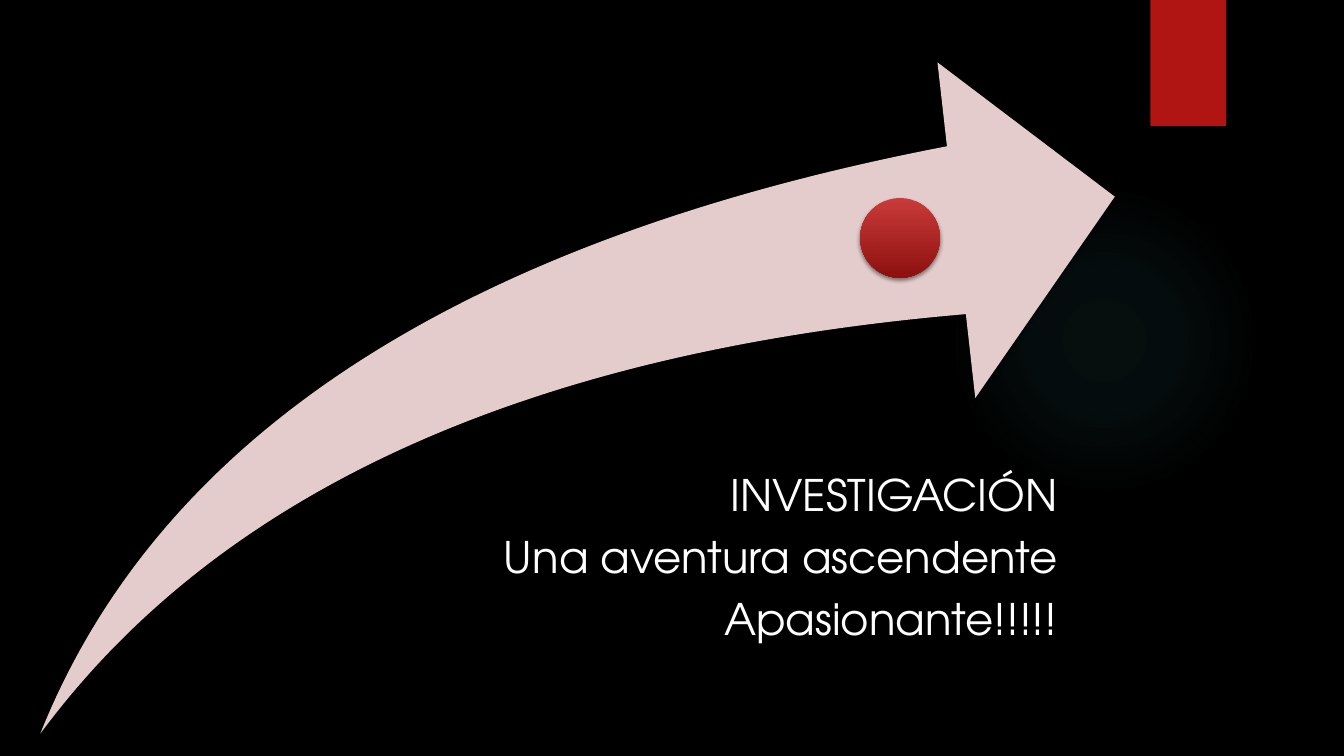
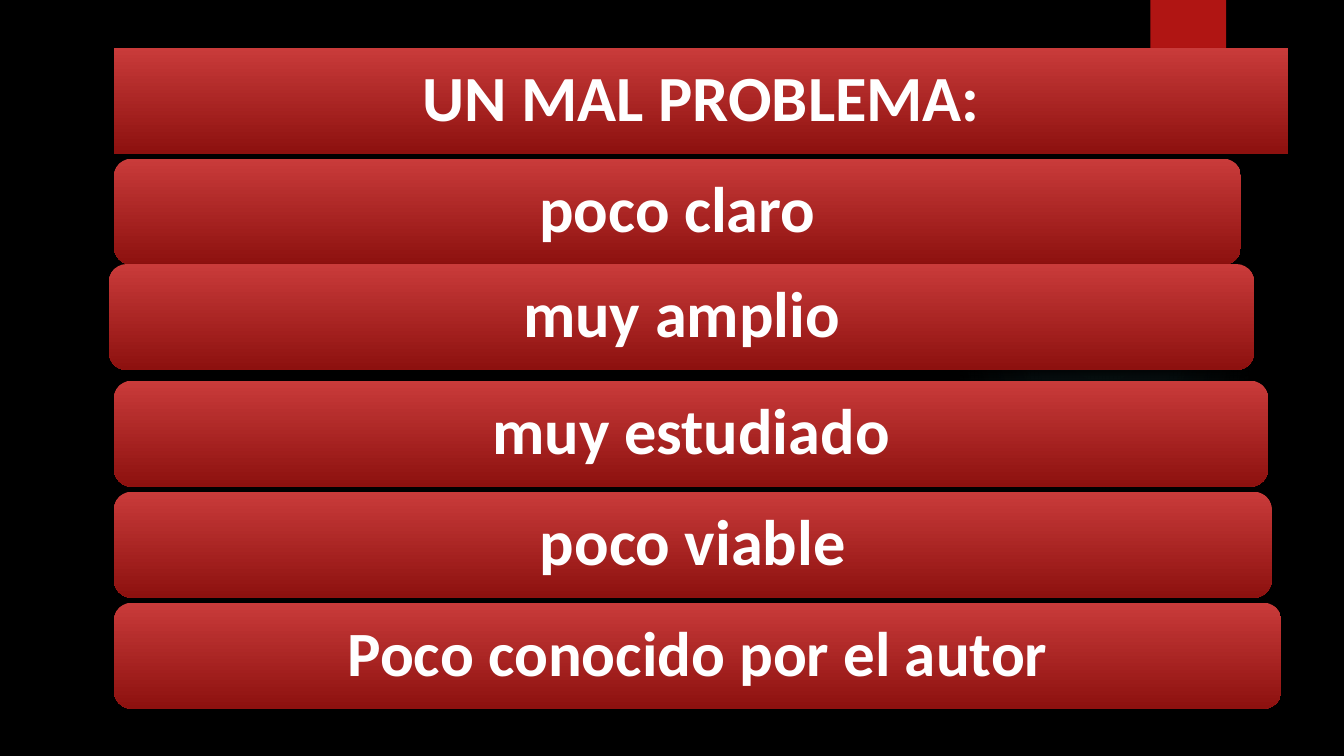
from pptx import Presentation
from pptx.dml.color import RGBColor
from pptx.enum import shapes, text
from pptx.oxml import ns, parse_xml
from pptx.util import Pt

BLACK = RGBColor(0x00, 0x00, 0x00)
WHITE = RGBColor(0xFF, 0xFF, 0xFF)
RED = RGBColor(0xB0, 0x15, 0x13)
LIGHT_RED = RGBColor(0xC9, 0x3B, 0x3A)
DARK_RED = RGBColor(0x8D, 0x11, 0x0F)
PINK = RGBColor(0xE4, 0xCC, 0xCC)
TEAL = RGBColor(0x50, 0xB9, 0xC1)

COVER_FONT = "TeX Gyre Adventor"
BAR_FONT = "Calibri"
COVER_SIZE = 31
COVER_GAP = 10.85
COVER_LINE = 44.3
BAR_SIZE = 46
BAR_HEIGHT = 75.7
BAR_PITCH = 79.3
PROBLEM_BARS = [
    ("UN MAL PROBLEMA:", 0, 0, 838.8, BAR_SIZE),
    ("poco claro", 0, 0, 805, BAR_SIZE),
    ("muy amplio", -3.6, -4, 818, BAR_SIZE),
    ("muy estudiado", 0, 0, 824.4, BAR_SIZE),
    ("poco viable", 0, 0, 826.9, BAR_SIZE),
    ("Poco conocido por el autor", 0, 0, 833.8, BAR_SIZE - 1),
]


def place(shape, left, top, width, height):
    shape.left, shape.top = Pt(left), Pt(top)
    shape.width, shape.height = Pt(width), Pt(height)


def add_preset(page, preset, left, top, width, height):
    return page.shapes.add_shape(preset, Pt(left), Pt(top), Pt(width), Pt(height))


def fill_solid(shape, color):
    shape.fill.solid()
    shape.fill.fore_color.rgb = color


def fill_red_gradient(shape):
    shape.fill.gradient()
    shape.fill.gradient_angle = 270
    for stop, color, position in zip(shape.fill.gradient_stops, (LIGHT_RED, DARK_RED), (0, 1)):
        stop.color.rgb = color
        stop.position = position


def fill_glow(shape):
    stops = "".join(
        f'<a:gs pos="{position * 1000}"><a:srgbClr val="{TEAL}">'
        f'<a:alpha val="{opacity * 1000}"/></a:srgbClr></a:gs>'
        for position, opacity in ((0, 7), (36, 6), (69, 0))
    )
    shape.element.spPr.append(parse_xml(
        f'<a:gradFill {ns.nsdecls("a")}><a:gsLst>{stops}</a:gsLst><a:path path="circle">'
        '<a:fillToRect l="50000" t="50000" r="50000" b="50000"/></a:path></a:gradFill>'
    ))


def remove_outline(shape):
    shape.line.fill.background()
    shape.shadow.inherit = False


def add_shadow(shape):
    remove_outline(shape)
    effects = shape.element.spPr.find(ns.qn("a:effectLst"))
    effects.append(parse_xml(
        f'<a:outerShdw {ns.nsdecls("a")} blurRad="{Pt(3)}" dist="{Pt(2)}" dir="5400000" rotWithShape="0">'
        f'<a:srgbClr val="{BLACK}"><a:alpha val="45000"/></a:srgbClr></a:outerShdw>'
    ))


def write(shape, lines, font, size, align, anchor, insets, gap=0, bold=False):
    frame = shape.text_frame
    frame.word_wrap = True
    frame.auto_size = text.MSO_AUTO_SIZE.NONE
    frame.vertical_anchor = anchor
    frame.margin_left, frame.margin_top, frame.margin_right, frame.margin_bottom = map(Pt, insets)
    for index, line in enumerate(lines):
        para = frame.add_paragraph() if index else frame.paragraphs[0]
        para.alignment = align
        para.line_spacing = 0.9
        para.space_before = Pt(0)
        para.space_after = Pt(gap)
        span = para.add_run()
        span.text = line
        span.font.name = font
        span.font.size = Pt(size)
        span.font.bold = bold
        span.font.color.rgb = WHITE


def decorate_master(deck, page):
    master = deck.slide_master
    master.background.fill.solid()
    master.background.fill.fore_color.rgb = BLACK
    glow = add_preset(page, shapes.MSO_SHAPE.OVAL, 677.5, 131.8, 221.8, 221.8)
    fill_glow(glow)
    remove_outline(glow)
    ribbon = add_preset(page, shapes.MSO_SHAPE.RECTANGLE, 821.8, 0, 54, 90)
    fill_solid(ribbon, RED)
    add_shadow(ribbon)
    for index, shape in enumerate((glow, ribbon)):
        shape.element.nvSpPr.cNvPr.set("id", str(100 + index))
        master.shapes.element.insert(2 + index, shape.element)


def draw_rising_arrow(page, left, top, width, height):
    arrow = add_preset(page, shapes.MSO_SHAPE.SWOOSH_ARROW, left, top, width, height)
    arrow.adjustments[0] = 0.25
    arrow.adjustments[1] = 0.25
    fill_solid(arrow, PINK)
    add_shadow(arrow)
    dot = add_preset(page, shapes.MSO_SHAPE.OVAL, left + 0.763 * width, top + 0.202 * height, 57, 57)
    fill_red_gradient(dot)
    add_shadow(dot)


def write_cover_text(page, left, top, width):
    title, subtitle = page.placeholders
    place(title, left, top, width, COVER_LINE)
    place(subtitle, left, top + COVER_LINE, width, 2 * COVER_LINE)
    for holder, lines in (
        (title, ["INVESTIGACIÓN"]),
        (subtitle, ["Una aventura ascendente", "Apasionante!!!!!"]),
    ):
        write(holder, lines, COVER_FONT, COVER_SIZE, text.PP_ALIGN.RIGHT,
              text.MSO_ANCHOR.TOP, (0, 0, 30.2, 0), COVER_GAP)


def make_title_bar(page, left, top, width, height):
    title = page.shapes.title
    place(title, left, top, width, height)
    title.element.spPr.append(parse_xml(
        f'<a:prstGeom {ns.nsdecls("a")} prst="roundRect"><a:avLst/></a:prstGeom>'
    ))
    return title


def draw_problem_bars(page, left, top):
    for index, (label, shift, lift, width, size) in enumerate(PROBLEM_BARS):
        box = (left + shift, top + lift + index * BAR_PITCH, width, BAR_HEIGHT)
        if index:
            bar = add_preset(page, shapes.MSO_SHAPE.ROUNDED_RECTANGLE, *box)
        else:
            bar = make_title_bar(page, *box)
        fill_red_gradient(bar)
        add_shadow(bar)
        write(bar, [label], BAR_FONT, size, text.PP_ALIGN.CENTER,
              text.MSO_ANCHOR.MIDDLE, (13.7, 7, 13.7, 7), bold=True)


def main():
    deck = Presentation()
    deck.slide_width, deck.slide_height = Pt(960), Pt(540)
    cover = deck.slides.add_slide(deck.slide_layouts[0])
    decorate_master(deck, cover)
    draw_rising_arrow(cover, 28.8, 44.6, 767.5, 479.5)
    write_cover_text(cover, 28.1, 338.4, 757.4)
    problem = deck.slides.add_slide(deck.slide_layouts[5])
    draw_problem_bars(problem, 81.4, 34)
    deck.save("out.pptx")


if __name__ == "__main__":
    main()
